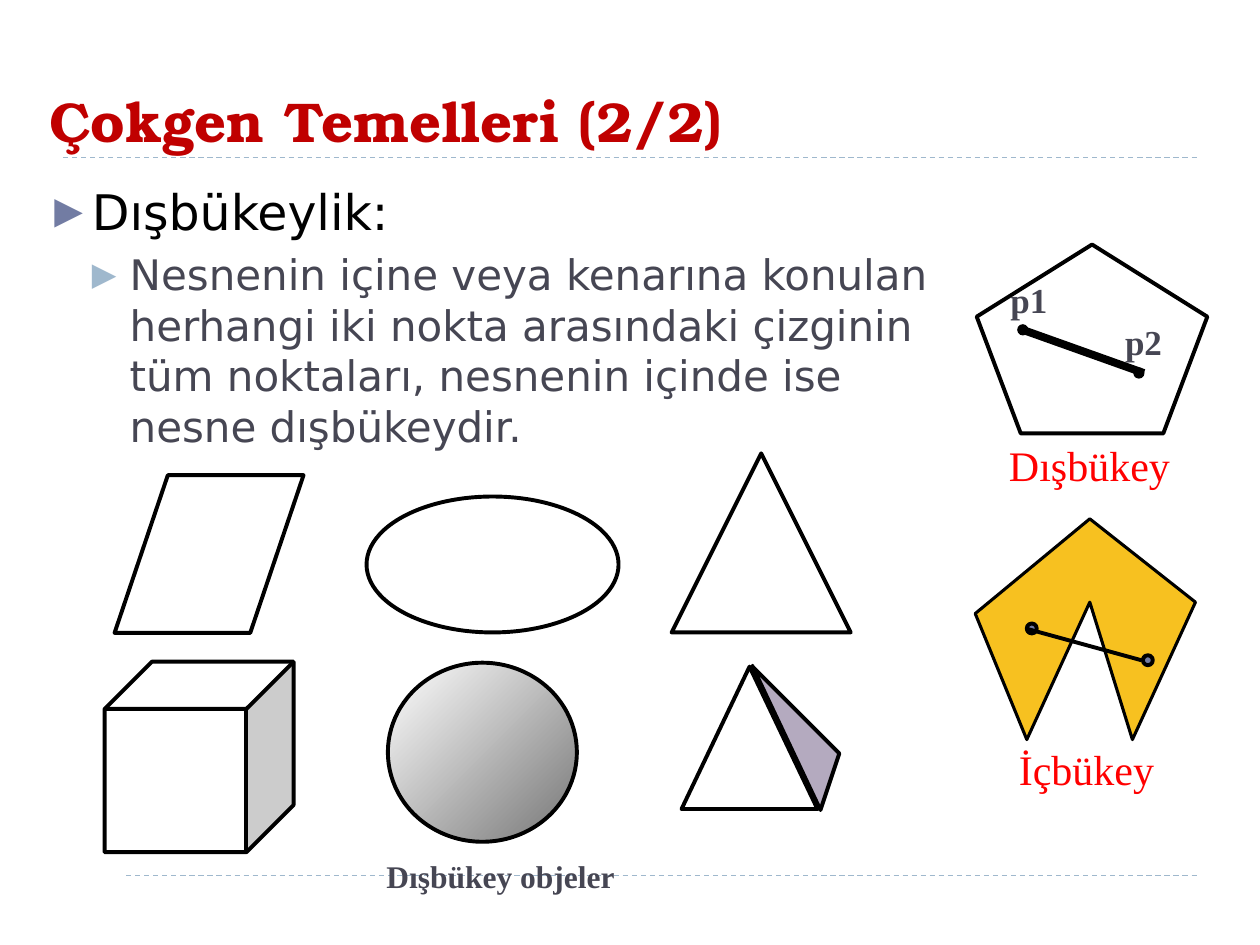
from lxml import etree
from pptx import Presentation
from pptx.dml.color import RGBColor
from pptx.enum.dml import MSO_LINE
from pptx.enum.shapes import MSO_CONNECTOR, MSO_SHAPE
from pptx.enum.text import MSO_ANCHOR, MSO_AUTO_SIZE, PP_ALIGN
from pptx.oxml.ns import qn
from pptx.util import Cm, Pt

OVAL, TRIANGLE = MSO_SHAPE.OVAL, MSO_SHAPE.ISOSCELES_TRIANGLE
PARALLELOGRAM, CUBE = MSO_SHAPE.PARALLELOGRAM, MSO_SHAPE.CUBE
PENTAGON, RECTANGLE = MSO_SHAPE.REGULAR_PENTAGON, MSO_SHAPE.RECTANGLE
STRAIGHT, DASH = MSO_CONNECTOR.STRAIGHT, MSO_LINE.DASH
LEFT, TOP, MIDDLE = PP_ALIGN.LEFT, MSO_ANCHOR.TOP, MSO_ANCHOR.MIDDLE
NO_FIT, GROW = MSO_AUTO_SIZE.NONE, MSO_AUTO_SIZE.SHAPE_TO_FIT_TEXT

BLACK, WHITE = RGBColor(0, 0, 0), RGBColor(255, 255, 255)
GREY = RGBColor(0x76, 0x76, 0x76)
SLATE = RGBColor(0x46, 0x46, 0x53)
RED = RGBColor(0xFF, 0, 0)
DARK_RED = RGBColor(0xC0, 0, 0)
INDIGO = RGBColor(0x72, 0x7C, 0xA3)
PALE_BLUE = RGBColor(0x9F, 0xB8, 0xCD)
PURPLE = RGBColor(0x6B, 0x56, 0x80)
YELLOW = RGBColor(0xF7, 0xC1, 0x20)
SANS, SERIF, TITLE_FONT = "DejaVu Sans", "Times New Roman", "TeX Gyre Bonum"

# Content; all lengths in cm
TITLE = "Çokgen Temelleri (2/2)"
BULLETS = [  # text, size, colour, bullet colour, space before
    ("Dışbükeylik:", 28, BLACK, INDIGO, 6),
    ("Nesnenin içine veya kenarına konulan herhangi iki nokta arasındaki "
     "çizginin tüm noktaları, nesnenin içinde ise nesne dışbükeydir.",
     24, SLATE, PALE_BLUE, 5),
]
CONVEX_OBJECTS = [  # preset, box, fill, first adjustment
    (PARALLELOGRAM, (2.31, 9.58, 3.81, 3.18), None, 0.338),
    (OVAL, (7.39, 10.01, 5.08, 2.74), None, None),
    (TRIANGLE, (13.54, 9.14, 3.61, 3.61), None, None),
    (CUBE, (2.11, 13.34, 3.81, 3.84), WHITE, None),
    (OVAL, (7.82, 13.36, 3.81, 3.61), (WHITE, GREY), None),
    (TRIANGLE, (13.74, 13.44, 2.74, 2.87), WHITE, None),
]
PYRAMID_SIDE = [(15.14, 13.41), (16.92, 15.19), (16.54, 16.33), (15.16, 13.41)]
CONCAVE = [(21.97, 10.46), (19.66, 12.37), (20.7, 14.91),
           (21.97, 12.14), (22.83, 14.91), (24.1, 12.14)]
DOT = 0.2
CONVEX_DOTS = [(20.52, 6.55), (22.86, 7.42)]
CONCAVE_DOTS = [(20.7, 12.57), (23.04, 13.21)]
POINT_LABELS = [("p1", (20.12, 5.51, 1.27, 1.07)),
                ("p2", (22.43, 6.35, 1.27, 1.07))]
CAPTIONS = [  # text, box, size, colour, bold
    ("Dışbükey objeler", (7.54, 17.15, 5.16, 1.02), 18, SLATE, True),
    ("İçbükey", (20.29, 14.86, 3.28, 1.27), 24, RED, False),
    ("Dışbükey", (20.09, 8.74, 3.78, 1.27), 24, RED, False),
]

prs = Presentation()
prs.slide_width, prs.slide_height = Cm(25.4), Cm(19.05)
s = prs.slides.add_slide(prs.slide_layouts[1])


def lengths(values):
    return [Cm(v) for v in values]


def write(p, text, size, color, font=SERIF, bold=False):
    p.alignment = LEFT
    r = p.add_run()
    r.text = text
    r.font.name, r.font.size, r.font.bold = font, Pt(size), bold
    r.font.color.rgb = color


def paint(sp, fill=None, line=BLACK, width=2.25):
    sp.shadow.inherit = False
    if fill is None:
        sp.fill.background()
    elif isinstance(fill, RGBColor):
        sp.fill.solid()
        sp.fill.fore_color.rgb = fill
    else:
        sp.fill.gradient()
        sp.fill.gradient_angle = 315
        for stop, color in zip(sp.fill.gradient_stops, fill):
            stop.color.rgb = color
    if line is None:
        sp.line.fill.background()
    else:
        sp.line.color.rgb, sp.line.width = line, Pt(width)
    return sp


def shape(preset, box, adj=None, **style):
    sp = s.shapes.add_shape(preset, *lengths(box))
    if adj is not None:
        sp.adjustments[0] = adj
    return paint(sp, **style)


def outline(points, close, **style):
    start, *rest = [lengths(pt) for pt in points]
    fb = s.shapes.build_freeform(*start)
    fb.add_line_segments(rest, close=close)
    return paint(fb.convert_to_shape(), **style)


def connect(start, end, width=2.25, color=BLACK, dash=None):
    ln = s.shapes.add_connector(STRAIGHT, *lengths(start + end))
    ln.line.color.rgb, ln.line.width = color, Pt(width)
    if dash:
        ln.line.dash_style = dash
    etree.SubElement(ln._element.spPr, qn("a:effectLst"))


def label(text, box, anchor=TOP, fit=GROW, **style):
    tf = s.shapes.add_textbox(*lengths(box)).text_frame
    tf.word_wrap, tf.auto_size, tf.vertical_anchor = False, fit, anchor
    write(tf.paragraphs[0], text, **style)


def place(sp, box, anchor):
    sp.left, sp.top, sp.width, sp.height = lengths(box)
    tf = sp.text_frame
    tf.word_wrap, tf.auto_size, tf.vertical_anchor = True, NO_FIT, anchor
    return tf


def set_bullet(p, level, color):
    pPr = p._p.get_or_add_pPr()
    pPr.set("marL", str(Cm(0.76 * (level + 1))))
    pPr.set("indent", str(-Cm(0.76)))
    clr = etree.SubElement(pPr, qn("a:buClr"))
    etree.SubElement(clr, qn("a:srgbClr"), val=str(color))
    etree.SubElement(pPr, qn("a:buSzPct"), val="76000")
    etree.SubElement(pPr, qn("a:buFont"), typeface=SANS)
    etree.SubElement(pPr, qn("a:buChar"), char="▶")


# Title and bullets
tf = place(s.shapes.title, (0.74, 0.84, 23.83, 3.18), MIDDLE)
write(tf.paragraphs[0], TITLE, 32, DARK_RED, font=TITLE_FONT, bold=True)
tf = place(s.placeholders[1], (0.84, 3.53, 18.9, 13.51), TOP)
for level, (text, size, color, bullet, before) in enumerate(BULLETS):
    p = tf.add_paragraph() if level else tf.paragraphs[0]
    p.level, p.space_before = level, Pt(before)
    set_bullet(p, level, bullet)
    write(p, text, size, color, font=SANS)

# Dashed rules; the corner block hides the start of the lower one
for y in (17.65, 3.18):
    connect((1.27, y), (24.13, y), 0.75, PALE_BLUE, DASH)
shape(RECTANGLE, (0.89, 17.32, 1.6, 1.6), fill=WHITE, line=None)

# Convex objects
for preset, box, fill, adj in CONVEX_OBJECTS:
    shape(preset, box, adj, fill=fill)
side = outline(PYRAMID_SIDE, False, fill=PURPLE)
side_color = side.fill._xPr.find(qn("a:solidFill"))[0]
etree.SubElement(side_color, qn("a:alpha"), val="50000")

# Convex pentagon with its inner segment
shape(PENTAGON, (19.69, 4.93, 4.65, 3.81))
for dot in CONVEX_DOTS:
    shape(OVAL, dot + (DOT, DOT), fill=BLACK, width=0.75)
for text, box in POINT_LABELS:
    label(text, box, MIDDLE, NO_FIT, size=20, color=SLATE, bold=True)
connect((20.62, 6.65), (23.06, 7.52), 4.5)

# Concave polygon with the segment that leaves it
outline(CONCAVE, True, fill=YELLOW, width=1.75)
for dot in CONCAVE_DOTS:
    shape(OVAL, dot + (DOT, DOT), fill=INDIGO)
connect((20.68, 12.67), (23.01, 13.31))

# Captions
for text, box, size, color, bold in CAPTIONS:
    label(text, box, size=size, color=color, bold=bold)

prs.save("out.pptx")
